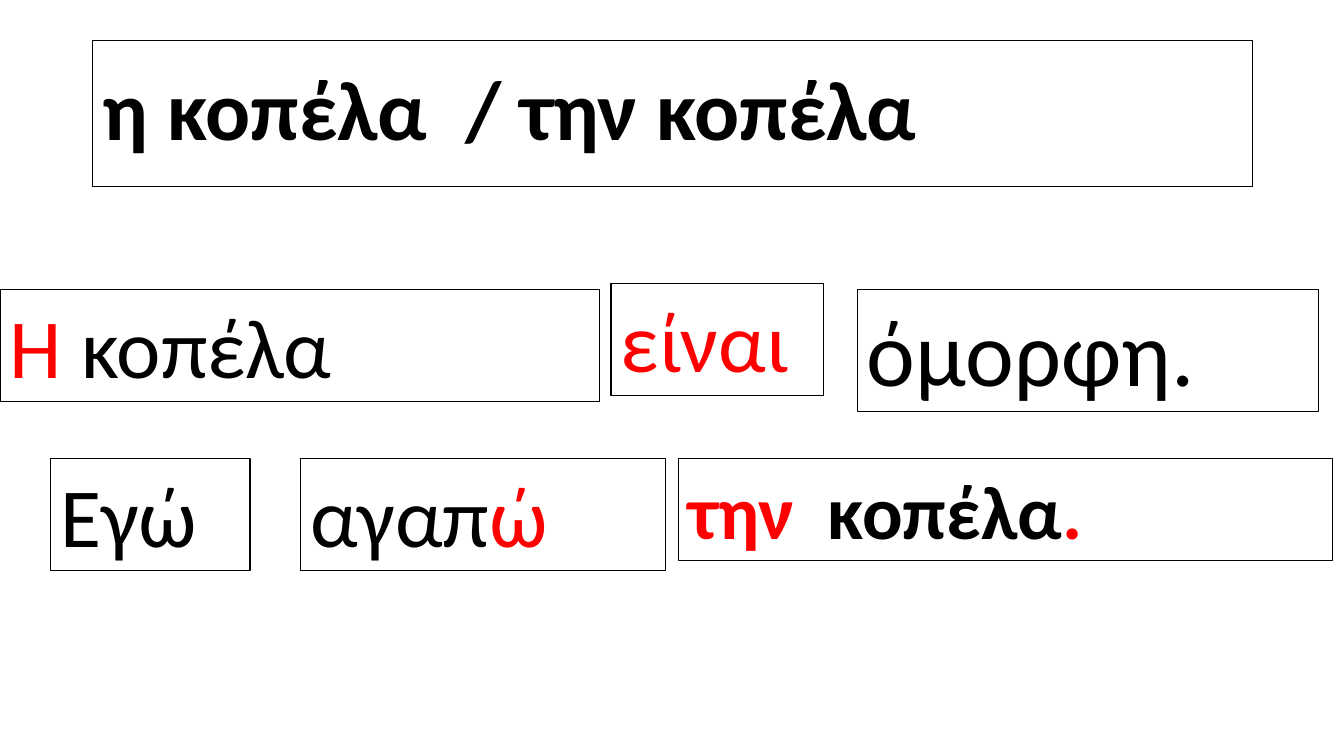
from dataclasses import dataclass

from pptx import Presentation
from pptx.dml.color import RGBColor
from pptx.enum.text import MSO_ANCHOR, MSO_AUTO_SIZE
from pptx.slide import Slide
from pptx.util import Inches, Pt

MIDDLE, TOP = MSO_ANCHOR.MIDDLE, MSO_ANCHOR.TOP
FIT_SHAPE, NO_FIT = MSO_AUTO_SIZE.SHAPE_TO_FIT_TEXT, MSO_AUTO_SIZE.NONE


@dataclass(frozen=True)
class Theme:
    font: str = "Calibri"
    ink: RGBColor = RGBColor(0, 0, 0)
    accent: RGBColor = RGBColor(255, 0, 0)
    small: int = 54
    normal: int = 60
    large: int = 66
    border: float = 0.75


THEME = Theme()


@dataclass(frozen=True)
class Piece:
    text: str
    color: RGBColor = THEME.ink


@dataclass(frozen=True)
class WordBox:
    left: float
    top: float
    width: float
    height: float
    pieces: tuple[Piece, ...]
    size: int = THEME.normal
    bold: bool = False
    title: bool = False


ROW_1, ROW_2 = 2.87, 4.55

BOXES = (
    WordBox(0.92, 0.4, 11.5, 1.45, (Piece("η κοπέλα  / την κοπέλα"),), bold=True, title=True),
    WordBox(0, ROW_1, 5.95, 1.11, (Piece("Η", THEME.accent), Piece(" κοπέλα"))),
    WordBox(6.06, 2.81, 2.11, 1.11, (Piece("είναι", THEME.accent),)),
    WordBox(8.5, ROW_1, 4.58, 1.21, (Piece("όμορφη."),), THEME.large),
    WordBox(0.5, ROW_2, 1.98, 1.11, (Piece("Εγώ"),)),
    WordBox(2.98, ROW_2, 3.62, 1.11, (Piece("αγαπ"), Piece("ώ", THEME.accent))),
    WordBox(
        6.73, ROW_2, 6.49, 1.01,
        (Piece("την  ", THEME.accent), Piece("κοπέλα"), Piece(".", THEME.accent)),
        THEME.small, bold=True,
    ),
)


def draw_box(s: Slide, box: WordBox) -> None:
    """Draw one outlined text box with its coloured pieces."""
    sp = s.shapes.add_textbox(
        Inches(box.left), Inches(box.top), Inches(box.width), Inches(box.height)
    )
    sp.line.color.rgb = THEME.ink
    sp.line.width = Pt(THEME.border)
    tf = sp.text_frame
    tf.word_wrap = True
    tf.auto_size = NO_FIT if box.title else FIT_SHAPE
    tf.vertical_anchor = MIDDLE if box.title else TOP
    p = tf.paragraphs[0]
    if box.title:
        p.line_spacing = 0.9
    p.font.name = THEME.font
    p.font.size = Pt(box.size)
    p.font.bold = box.bold
    same_color = len({piece.color for piece in box.pieces}) == 1
    if same_color:
        p.font.color.rgb = box.pieces[0].color
    for piece in box.pieces:
        r = p.add_run()
        r.text = piece.text
        if not same_color:
            r.font.color.rgb = piece.color


def main() -> None:
    """Build the slide and save it."""
    prs = Presentation()
    prs.slide_width, prs.slide_height = Inches(13.33), Inches(7.5)
    s = prs.slides.add_slide(prs.slide_layouts[6])
    for box in BOXES:
        draw_box(s, box)
    prs.save("out.pptx")


if __name__ == "__main__":
    main()
